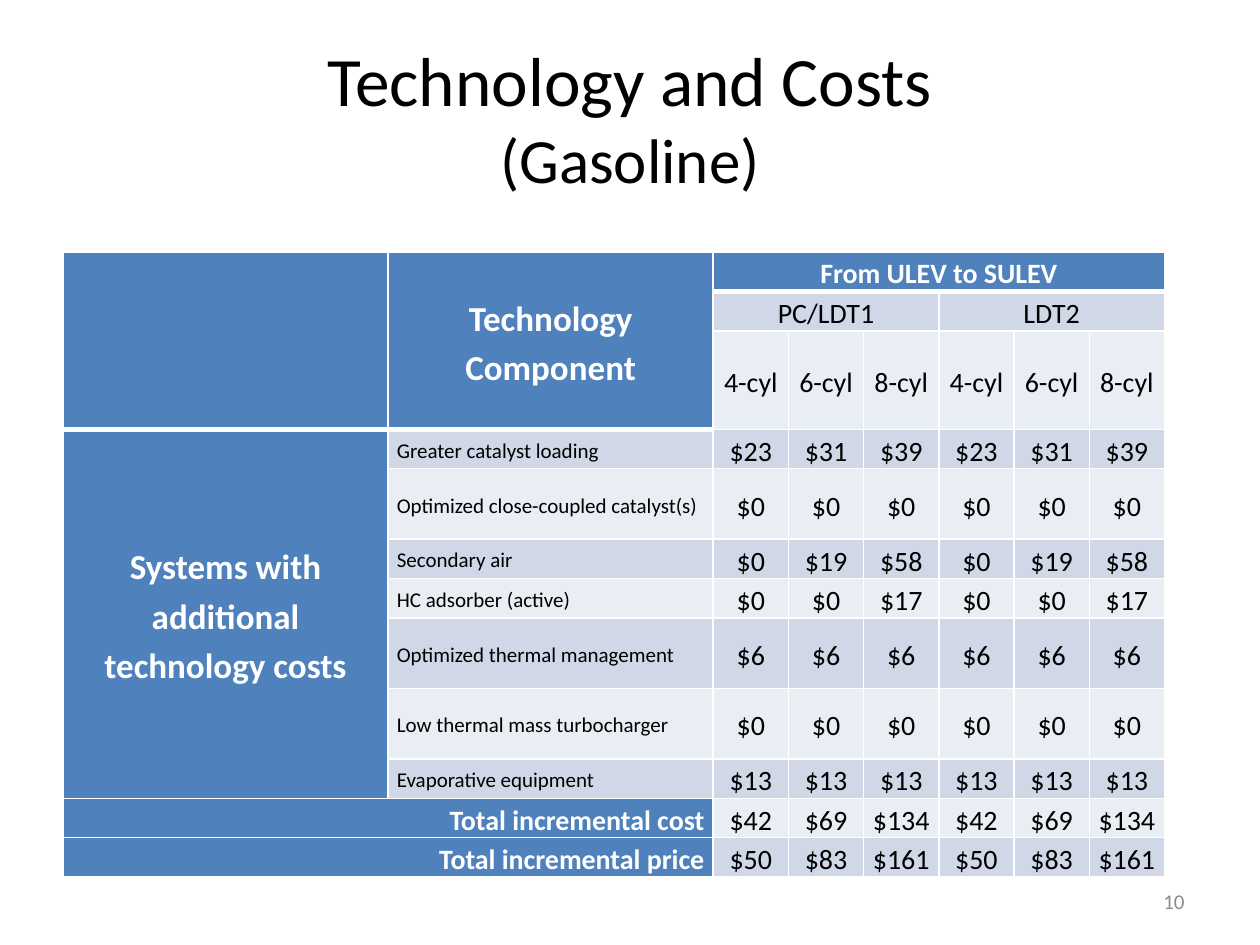
from lxml.etree import SubElement
from pptx import Presentation
from pptx.dml.color import RGBColor
from pptx.enum.text import MSO_ANCHOR, PP_ALIGN
from pptx.oxml.ns import qn
from pptx.util import Pt

FONT = "Calibri"
BLACK, WHITE, GREY = "000000", "FFFFFF", "8C8C8C"
BLUE, DARK_BAND, LIGHT_BAND = "4F81BD", "D0D8E8", "E9EDF4"

TITLE_LINES = [("Technology and Costs", 39.6), ("(Gasoline)", 36)]
PAGE_NUMBER = "10"

CYLINDERS = ["4-cyl", "6-cyl", "8-cyl"]
HEADER_ROWS = [
    ["", "Technology Component", "From ULEV to SULEV", "", "", "", "", ""],
    ["", "", "PC/LDT1", "", "", "LDT2", "", ""],
    ["", "", *CYLINDERS, *CYLINDERS],
]
# Costs for 4, 6 and 8 cylinders, the same for PC/LDT1 and LDT2
COMPONENT_COSTS = [
    ("Greater catalyst loading", 23, 31, 39),
    ("Optimized close-coupled catalyst(s)", 0, 0, 0),
    ("Secondary air", 0, 19, 58),
    ("HC adsorber (active)", 0, 0, 17),
    ("Optimized thermal management", 6, 6, 6),
    ("Low thermal mass turbocharger", 0, 0, 0),
    ("Evaporative equipment", 13, 13, 13),
]
TOTALS = [
    ("Total incremental cost", 42, 69, 134),
    ("Total incremental price", 50, 83, 161),
]
GROUP_LABEL = "Systems with additional technology costs"

COLUMN_WIDTHS = [185.8] * 2 + [43] * 6
ROW_HEIGHT, TALL_ROW_HEIGHT = 21.6, 40.3
TALL_ROWS = {4, 7, 8}
FIRST_COMPONENT = len(HEADER_ROWS)
FIRST_TOTAL = FIRST_COMPONENT + len(COMPONENT_COSTS)
# First row, first column, last row, last column
MERGES = [(0, 0, 2, 0), (0, 1, 2, 1), (0, 2, 0, 7), (1, 2, 1, 4), (1, 5, 1, 7),
          (FIRST_COMPONENT, 0, FIRST_TOTAL - 1, 0)]
MERGES += [(FIRST_TOTAL + i, 0, FIRST_TOTAL + i, 1) for i in range(len(TOTALS))]


def rgb(code):
    return RGBColor.from_string(code)


def format_run(run, size, color, bold=False):
    run.font.name = FONT
    run.font.size = Pt(size)
    run.font.bold = bold
    run.font.color.rgb = rgb(color)


def set_borders(cell, bottom_width):
    """Draw white lines round a cell; only the bottom one varies."""
    properties = cell._tc.get_or_add_tcPr()
    for side, width in (("L", 1), ("R", 1), ("T", 1), ("B", bottom_width)):
        line = SubElement(properties, qn(f"a:ln{side}"), w=str(Pt(width)))
        fill = SubElement(line, qn("a:solidFill"))
        SubElement(fill, qn("a:srgbClr"), val=WHITE)


def table_rows():
    def priced(costs):
        return [f"${cost}" for cost in costs] * 2

    rows = list(HEADER_ROWS)
    for i, (component, *costs) in enumerate(COMPONENT_COSTS):
        rows.append([GROUP_LABEL if i == 0 else "", component, *priced(costs)])
    rows += [[label, "", *priced(costs)] for label, *costs in TOTALS]
    return rows


def cell_style(row, column):
    """Return size, alignment and whether the cell is a blue heading."""
    if row >= FIRST_TOTAL and column < 2:
        return 16, PP_ALIGN.RIGHT, True
    if column == 0 or (column == 1 and row < FIRST_COMPONENT):
        return 20, PP_ALIGN.CENTER, True
    if column == 1:
        return 12, PP_ALIGN.LEFT, False
    return 16, PP_ALIGN.CENTER, row == 0


def fill_cell(cell, text, row, column):
    size, alignment, heading = cell_style(row, column)
    cell.margin_left = cell.margin_right = Pt(5)
    cell.margin_top = cell.margin_bottom = Pt(0)
    cell.vertical_anchor = MSO_ANCHOR.MIDDLE
    set_borders(cell, 3 if heading and row == 0 else 1)
    band = DARK_BAND if row % 2 else LIGHT_BAND
    cell.fill.solid()
    cell.fill.fore_color.rgb = rgb(BLUE if heading else band)
    paragraph = cell.text_frame.paragraphs[0]
    paragraph.text = text
    paragraph.alignment = alignment
    paragraph.line_spacing = 1.15
    for run in paragraph.runs:
        format_run(run, size, WHITE if heading else BLACK, heading)


def add_title(slide):
    title = slide.shapes.title
    title.left, title.top, title.width, title.height = Pt(36), Pt(21.6), Pt(648), Pt(90)
    title.text_frame.vertical_anchor = MSO_ANCHOR.MIDDLE
    paragraph = title.text_frame.paragraphs[0]
    paragraph.text = "\v".join(text for text, _ in TITLE_LINES)
    paragraph.alignment = PP_ALIGN.CENTER
    for run, (_, size) in zip(paragraph.runs, TITLE_LINES):
        format_run(run, size, BLACK)


def add_cost_table(slide):
    rows = table_rows()
    heights = [TALL_ROW_HEIGHT if i in TALL_ROWS else ROW_HEIGHT for i in range(len(rows))]
    table = slide.shapes.add_table(
        len(rows), len(COLUMN_WIDTHS), Pt(36), Pt(144),
        Pt(sum(COLUMN_WIDTHS)), Pt(sum(heights))).table
    for column, width in zip(table.columns, COLUMN_WIDTHS):
        column.width = Pt(width)
    for row, height in zip(table.rows, heights):
        row.height = Pt(height)
    for r, texts in enumerate(rows):
        for c, text in enumerate(texts):
            fill_cell(table.cell(r, c), text, r, c)
    for top, left, bottom, right in MERGES:
        table.cell(top, left).merge(table.cell(bottom, right))


def add_page_number(slide):
    frame = slide.shapes.add_textbox(Pt(516), Pt(500.4), Pt(168), Pt(28.8)).text_frame
    frame.word_wrap = True
    frame.vertical_anchor = MSO_ANCHOR.MIDDLE
    frame.text = PAGE_NUMBER
    frame.paragraphs[0].alignment = PP_ALIGN.RIGHT
    format_run(frame.paragraphs[0].runs[0], 12, GREY)


def main():
    presentation = Presentation()
    presentation.slide_width, presentation.slide_height = Pt(720), Pt(540)
    slide = presentation.slides.add_slide(presentation.slide_layouts[5])
    add_title(slide)
    add_cost_table(slide)
    add_page_number(slide)
    presentation.save("out.pptx")


if __name__ == "__main__":
    main()
